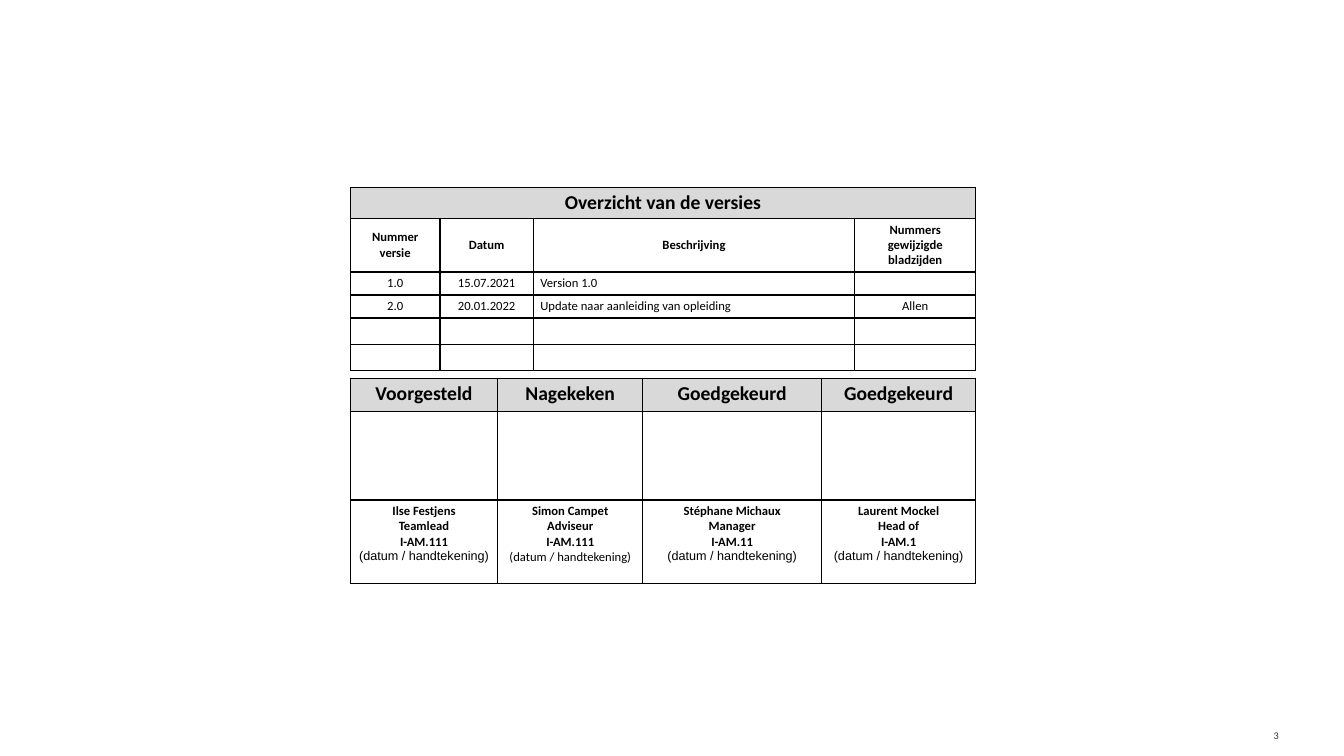
import lxml.etree
import pptx
import pptx.dml.color
import pptx.enum.text
import pptx.oxml.ns
import pptx.util

Cm = pptx.util.Cm
Pt = pptx.util.Pt
ALIGN = pptx.enum.text.PP_ALIGN
ANCHOR = pptx.enum.text.MSO_ANCHOR
qn = pptx.oxml.ns.qn

BLACK = pptx.dml.color.RGBColor(0, 0, 0)
WHITE = pptx.dml.color.RGBColor(255, 255, 255)
GREY = pptx.dml.color.RGBColor(0xD9, 0xD9, 0xD9)
NAVY = pptx.dml.color.RGBColor(0x21, 0x3A, 0x53)

BODY = {"name": "Calibri", "size": Pt(9), "bold": False}
LABEL = {**BODY, "bold": True}
TITLE = {**LABEL, "size": Pt(14)}
ARIAL = {**BODY, "name": "Arial"}
PAGE = {**BODY, "size": Pt(7.3)}
MARGINS = {
    "margin_left": Cm(0.18),
    "margin_right": Cm(0.18),
    "margin_top": Cm(0.09),
    "margin_bottom": Cm(0.09),
}

VERSION_HEADERS = ["Nummer versie", "Datum", "Beschrijving", "Nummers gewijzigde bladzijden"]
VERSIONS = [
    ["1.0", "15.07.2021", "Version 1.0", ""],
    ["2.0", "20.01.2022", "Update naar aanleiding van opleiding", "Allen"],
    [""] * 4,
    [""] * 4,
]
SIGNATURES = [
    ("Voorgesteld", ["Ilse Festjens", "Teamlead", "I-AM.111"], ARIAL),
    ("Nagekeken", ["Simon Campet", "Adviseur", "I-AM.111"], BODY),
    ("Goedgekeurd", ["Stéphane Michaux", "Manager", "I-AM.11"], ARIAL),
    ("Goedgekeurd", ["Laurent Mockel", "Head of", "I-AM.1"], ARIAL),
]


def apply_format(target, values):
    for name, value in values.items():
        setattr(target, name, value)


def write_lines(text_frame, lines, color=BLACK, alignment=ALIGN.CENTER):
    for index, (text, font_format) in enumerate(lines):
        paragraph = text_frame.paragraphs[0] if index == 0 else text_frame.add_paragraph()
        paragraph.alignment = alignment
        if text:
            run = paragraph.add_run()
            run.text = text
            apply_format(run.font, font_format)
            run.font.color.rgb = color
        else:
            size = str(int(font_format["size"].pt * 100))
            lxml.etree.SubElement(paragraph._p, qn("a:endParaRPr"), sz=size)


def draw_borders(cell):
    properties = cell._tc.get_or_add_tcPr()
    for side in ("lnL", "lnR", "lnT", "lnB"):
        line = lxml.etree.SubElement(properties, qn(f"a:{side}"), w=str(Pt(1)))
        fill = lxml.etree.SubElement(line, qn("a:solidFill"))
        lxml.etree.SubElement(fill, qn("a:srgbClr"), val=str(BLACK))


def add_grid(slide, left, top, column_widths, row_heights):
    shape = slide.shapes.add_table(
        len(row_heights), len(column_widths), left, top, sum(column_widths), sum(row_heights)
    )
    table = shape.table
    apply_format(table, {"first_row": False, "horz_banding": False})
    for column, width in zip(table.columns, column_widths):
        column.width = width
    for row_index, (row, height) in enumerate(zip(table.rows, row_heights)):
        row.height = height
        for cell in row.cells:
            apply_format(cell, MARGINS)
            draw_borders(cell)
            cell.fill.solid()
            cell.fill.fore_color.rgb = GREY if row_index == 0 else WHITE
    return table


def add_versions(slide, left, top):
    widths = [Cm(2.26), Cm(2.35), Cm(8.1), Cm(3.05)]
    heights = [Cm(0.78), Cm(1.35), Cm(0.58), Cm(0.58), Cm(0.66), Cm(0.66)]
    table = add_grid(slide, left, top, widths, heights)
    table.cell(0, 0).merge(table.cell(0, 3))
    write_lines(table.cell(0, 0).text_frame, [("Overzicht van de versies", TITLE)])
    for column, header in enumerate(VERSION_HEADERS):
        cell = table.cell(1, column)
        cell.vertical_anchor = ANCHOR.MIDDLE
        write_lines(cell.text_frame, [(header, LABEL)])
    for row, version in enumerate(VERSIONS, start=2):
        for column, text in enumerate(version):
            alignment = ALIGN.LEFT if column == 2 else ALIGN.CENTER
            write_lines(table.cell(row, column).text_frame, [(text, BODY)], alignment=alignment)


def add_signatures(slide, left, top):
    widths = [Cm(3.71), Cm(3.66), Cm(4.5), Cm(3.89)]
    table = add_grid(slide, left, top, widths, [Cm(0.84), Cm(2.23), Cm(2.1)])
    for column, (heading, signer, note_format) in enumerate(SIGNATURES):
        lines = [(text, LABEL) for text in signer] + [("(datum / handtekening)", note_format)]
        write_lines(table.cell(0, column).text_frame, [(heading, TITLE)])
        write_lines(table.cell(1, column).text_frame, [("", BODY)])
        write_lines(table.cell(2, column).text_frame, lines)


def add_page_number(slide, left, top, width, height):
    text_frame = slide.shapes.add_textbox(left, top, width, height).text_frame
    apply_format(text_frame, {"word_wrap": True, "vertical_anchor": ANCHOR.MIDDLE})
    write_lines(text_frame, [("3", PAGE)], NAVY, ALIGN.LEFT)


def main():
    presentation = pptx.Presentation()
    apply_format(presentation, {"slide_width": Cm(33.87), "slide_height": Cm(19.05)})
    slide = presentation.slides.add_slide(presentation.slide_layouts[6])
    add_signatures(slide, Cm(8.83), Cm(9.53))
    add_versions(slide, Cm(8.83), Cm(4.72))
    add_page_number(slide, Cm(31.85), Cm(18.03), Cm(1.57), Cm(1.02))
    presentation.save("out.pptx")


if __name__ == "__main__":
    main()
